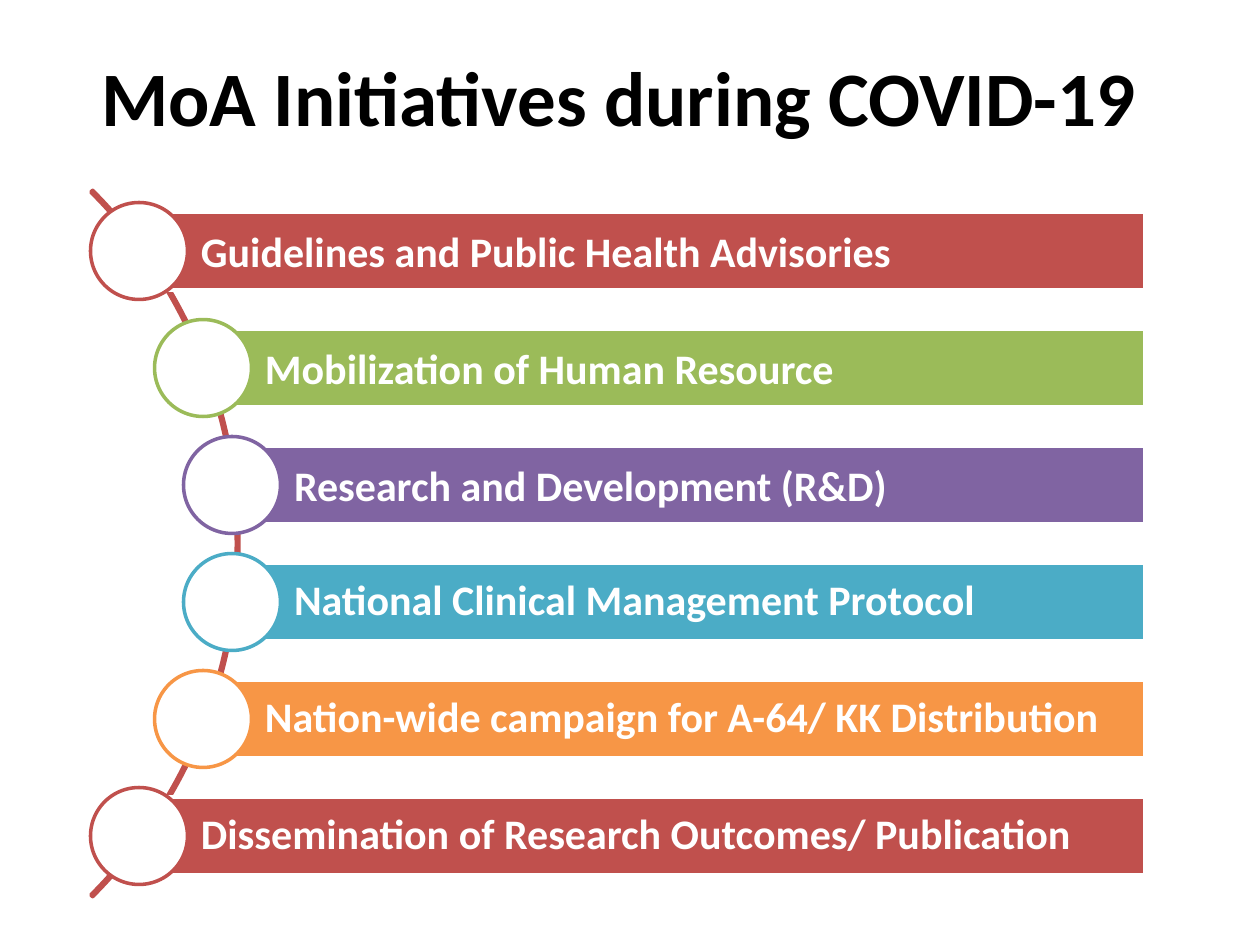
from dataclasses import dataclass

from pptx import Presentation
from pptx.dml.color import RGBColor
from pptx.enum.shapes import MSO_SHAPE
from pptx.enum.text import MSO_ANCHOR, PP_ALIGN
from pptx.util import Pt

RECT = MSO_SHAPE.RECTANGLE
OVAL = MSO_SHAPE.OVAL
BLOCK_ARC = MSO_SHAPE.BLOCK_ARC
MIDDLE = MSO_ANCHOR.MIDDLE
LEFT = PP_ALIGN.LEFT
CENTER = PP_ALIGN.CENTER

PX_PER_INCH = 126
SLIDE_W, SLIDE_H = 1260, 945
FIRST_TOP, PITCH = 212, 117
BAR_H, BAR_RIGHT = 78, 1145
CIRCLE = 97
ARC = 999


@dataclass(frozen=True)
class Theme:
    font: str = "Calibri"
    title_size: int = 44
    item_size: int = 24
    line_width: int = 2
    black: str = "000000"
    white: str = "FFFFFF"
    red: str = "C0504D"
    green: str = "9BBB59"
    purple: str = "8064A2"
    teal: str = "4BACC6"
    orange: str = "F79646"


THEME = Theme()

INITIATIVES = [
    ("Guidelines and Public Health Advisories", 139, THEME.red, 1.0),
    ("Mobilization of Human Resource", 203, THEME.green, 1.0),
    ("Research and Development (R&D)", 232, THEME.purple, 1.0),
    ("National Clinical Management Protocol", 232, THEME.teal, 0.9),
    ("Nation-wide campaign for A-64/ KK Distribution", 203, THEME.orange, 0.9),
    ("Dissemination of Research Outcomes/ Publication", 139, THEME.red, 0.9),
]


def px(n):
    return round(n * 914400 / PX_PER_INCH)


def rgb(value):
    return RGBColor.from_string(value)


def add_shape(s, kind, box, fill, line):
    sp = s.shapes.add_shape(kind, *map(px, box))
    sp.shadow.inherit = False
    if fill:
        sp.fill.solid()
        sp.fill.fore_color.rgb = rgb(fill)
    else:
        sp.fill.background()
    sp.line.color.rgb = rgb(line)
    sp.line.width = Pt(THEME.line_width)
    return sp


def set_text(sp, text, size, color, align, insets):
    tf = sp.text_frame
    tf.word_wrap = True
    tf.vertical_anchor = MIDDLE
    tf.margin_left, tf.margin_top, tf.margin_right, tf.margin_bottom = map(px, insets)
    p = tf.paragraphs[0]
    p.text = text
    p.alignment = align
    p.font.name = THEME.font
    p.font.size = Pt(size)
    p.font.bold = True
    p.font.color.rgb = rgb(color)
    return p


def add_title(s, text):
    sp = s.shapes.add_textbox(*map(px, (73, 42, 1092, 107)))
    set_text(sp, text, THEME.title_size, THEME.black, CENTER, (13, 6, 13, 6))


def add_arc(s):
    middle = FIRST_TOP + (PITCH * (len(INITIATIVES) - 1) + BAR_H) / 2
    sp = add_shape(s, BLOCK_ARC, (-760, middle - ARC / 2, ARC, ARC), None, THEME.red)
    for i, value in enumerate((189, 27, 0.0027)):
        sp.adjustments[i] = value


def add_initiative(s, top, text, left, color, spacing):
    bar = add_shape(s, RECT, (left, top, BAR_RIGHT - left, BAR_H), color, THEME.white)
    p = set_text(bar, text, THEME.item_size, THEME.white, LEFT, (62, 9, 9, 9))
    p.line_spacing = spacing
    circle_top = top + (BAR_H - CIRCLE) / 2
    add_shape(s, OVAL, (left - CIRCLE / 2, circle_top, CIRCLE, CIRCLE), THEME.white, color)


def main():
    prs = Presentation()
    prs.slide_width, prs.slide_height = px(SLIDE_W), px(SLIDE_H)
    s = prs.slides.add_slide(prs.slide_layouts[6])
    add_title(s, "MoA Initiatives during COVID-19")
    add_arc(s)
    for i, initiative in enumerate(INITIATIVES):
        add_initiative(s, FIRST_TOP + i * PITCH, *initiative)
    prs.save("out.pptx")


if __name__ == "__main__":
    main()
